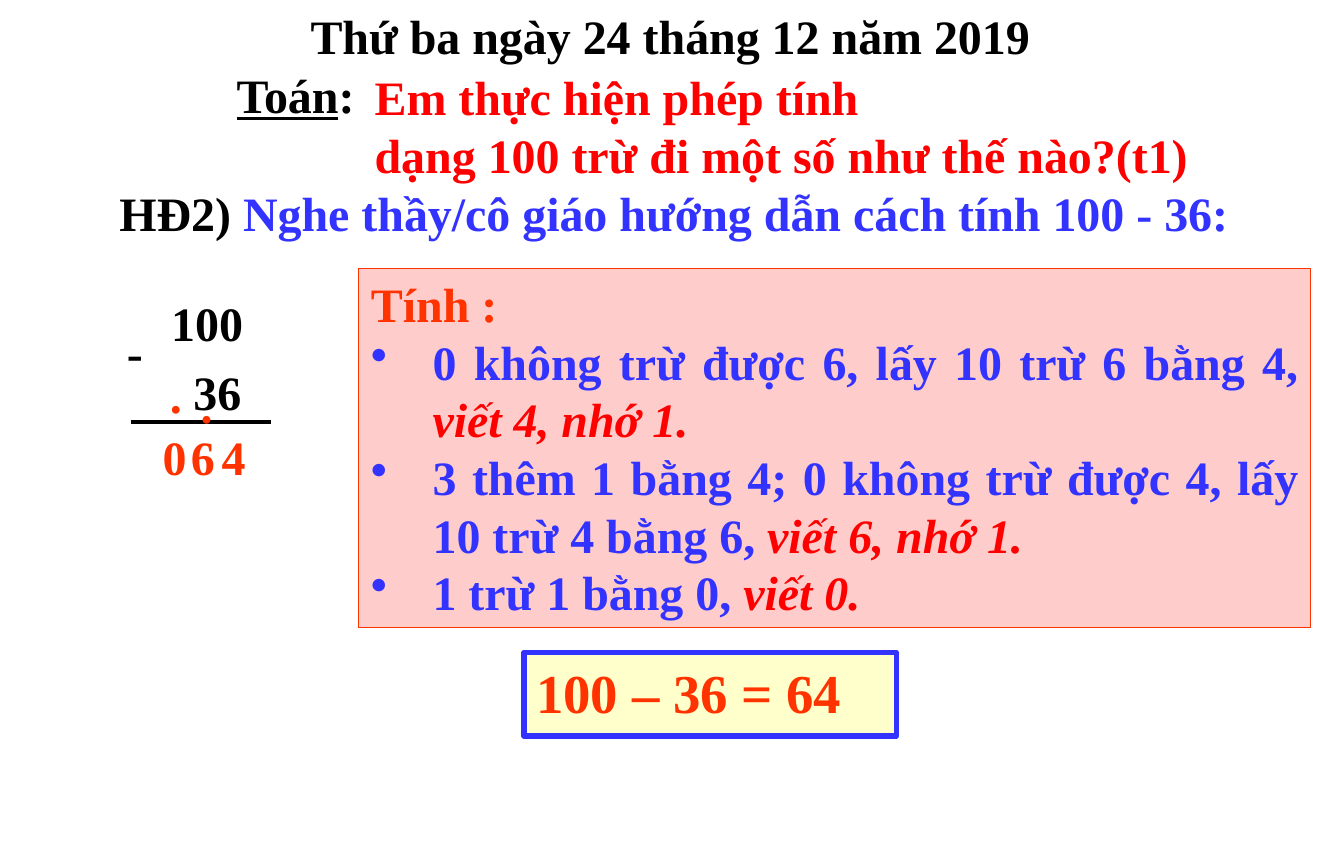
"""Builds a maths lesson slide on subtracting 36 from 100."""
from pptx import Presentation
from pptx import util as u
from pptx.dml.color import RGBColor
from pptx.enum import shapes, text
from pptx.oxml.ns import qn

BLACK, RED, ORANGE, BLUE = "000000", "FF0000", "FF3300", "3333FF"
LEFT, CENTER, JUSTIFY = text.PP_ALIGN.LEFT, text.PP_ALIGN.CENTER, text.PP_ALIGN.JUSTIFY

DATE = ((1.61, 0, 7.65, 0.57), "Thứ ba ngày 24 tháng 12 năm 2019")

HEADINGS = [
    ((0.87, 1.44, 9.9, 0.57), [[
        ("HĐ2) ", BLACK, {}),
        ("Nghe thầy/cô giáo hướng dẫn cách tính 100 - 36:", BLUE, {}),
    ]]),
    ((1.82, 0.48, 2.47, 0.57), [[("Toán", BLACK, {"underline": True}), (":", BLACK, {})]]),
    ((2.94, 0.5, 7.77, 1.03), [
        [("Em thực hiện phép tính", RED, {})],
        [("dạng 100 trừ đi một số như thế nào?(t1)", RED, {})],
    ]),
]

COLUMN_SUBTRACTION = [
    ("100", 1.29, 2.33, BLACK),
    ("36", 1.47, 2.89, BLACK),
    ("-", 0.93, 2.57, BLACK),
    (".", 1.28, 2.92, ORANGE),
    (".", 1.53, 3, ORANGE),
    ("0", 1.22, 3.42, ORANGE),
    ("6", 1.45, 3.42, ORANGE),
    ("4", 1.7, 3.42, ORANGE),
]
RULE = (1.06, 3.42, 2.2, 3.42)

STEPS_BOX = (2.91, 2.18, 7.72, 2.91)
STEPS_HEADING = "Tính :"
STEPS = [
    ("0 không trừ được 6, lấy 10 trừ 6 bằng 4, ", "viết 4, nhớ 1."),
    ("3 thêm 1 bằng 4; 0 không trừ được 4, lấy 10 trừ 4 bằng 6, ", "viết 6, nhớ 1."),
    ("1 trừ 1 bằng 0, ", "viết 0."),
]

RESULT_BOX = (4.25, 5.29, 3.02, 0.68)
RESULT = "100 – 36 = 64"


def color(value):
    return RGBColor.from_string(value)


def inches(values):
    return [u.Inches(value) for value in values]


def add_bullet(paragraph):
    properties = paragraph._p.get_or_add_pPr()
    properties.set("marL", str(u.Inches(0.5)))
    properties.set("indent", str(u.Inches(-0.5)))
    properties.append(properties.makeelement(qn("a:buChar"), {"char": "•"}))


def write(shape, paragraphs, alignment=LEFT, size=28, bulleted_from=None):
    frame = shape.text_frame
    settings = {
        "word_wrap": True,
        "auto_size": text.MSO_AUTO_SIZE.NONE,
        "vertical_anchor": text.MSO_ANCHOR.TOP,
    }
    for name, value in settings.items():
        setattr(frame, name, value)
    for index, runs in enumerate(paragraphs):
        paragraph = frame.add_paragraph() if index else frame.paragraphs[0]
        paragraph.alignment = alignment
        if bulleted_from is not None and index >= bulleted_from:
            add_bullet(paragraph)
        for words, run_color, extra in runs:
            run = paragraph.add_run()
            run.text = words
            font = {"name": "Times New Roman", "size": u.Pt(size), "bold": True, **extra}
            for name, value in font.items():
                setattr(run.font, name, value)
            run.font.color.rgb = color(run_color)


def add_panel(slide, box, fill, line, width):
    shape = slide.shapes.add_shape(shapes.MSO_SHAPE.RECTANGLE, *inches(box))
    shape.shadow.inherit = False
    shape.fill.solid()
    shape.fill.fore_color.rgb = color(fill)
    shape.line.color.rgb = color(line)
    shape.line.width = u.Pt(width)
    return shape


def add_rule(slide):
    rule = slide.shapes.add_connector(shapes.MSO_CONNECTOR.STRAIGHT, *inches(RULE))
    rule.line.color.rgb = color(BLACK)
    rule.line.width = u.Pt(2.25)
    properties = rule._element.spPr
    properties.append(properties.makeelement(qn("a:effectLst"), {}))


def main():
    presentation = Presentation()
    presentation.slide_width, presentation.slide_height = inches((10.9, 7))
    slide = presentation.slides.add_slide(presentation.slide_layouts[5])

    box, words = DATE
    title = slide.shapes.title
    for name, value in zip(("left", "top", "width", "height"), inches(box)):
        setattr(title, name, value)
    write(title, [[(words, BLACK, {})]], CENTER)

    for box, paragraphs in HEADINGS:
        write(slide.shapes.add_textbox(*inches(box)), paragraphs)

    steps = [[(STEPS_HEADING, ORANGE, {})]]
    steps += [[(reason, BLUE, {}), (result, RED, {"italic": True})] for reason, result in STEPS]
    write(add_panel(slide, STEPS_BOX, "FFCCCC", ORANGE, 0.75), steps, JUSTIFY, bulleted_from=1)

    add_rule(slide)
    for words, left, top, ink in COLUMN_SUBTRACTION:
        width = 0.4 + 0.2 * len(words)
        write(slide.shapes.add_textbox(*inches((left, top, width, 0.57))), [[(words, ink, {})]])

    result = add_panel(slide, RESULT_BOX, "FFFFCC", BLUE, 3)
    write(result, [[(RESULT, ORANGE, {})]], JUSTIFY, 32)
    presentation.save("out.pptx")


if __name__ == "__main__":
    main()
